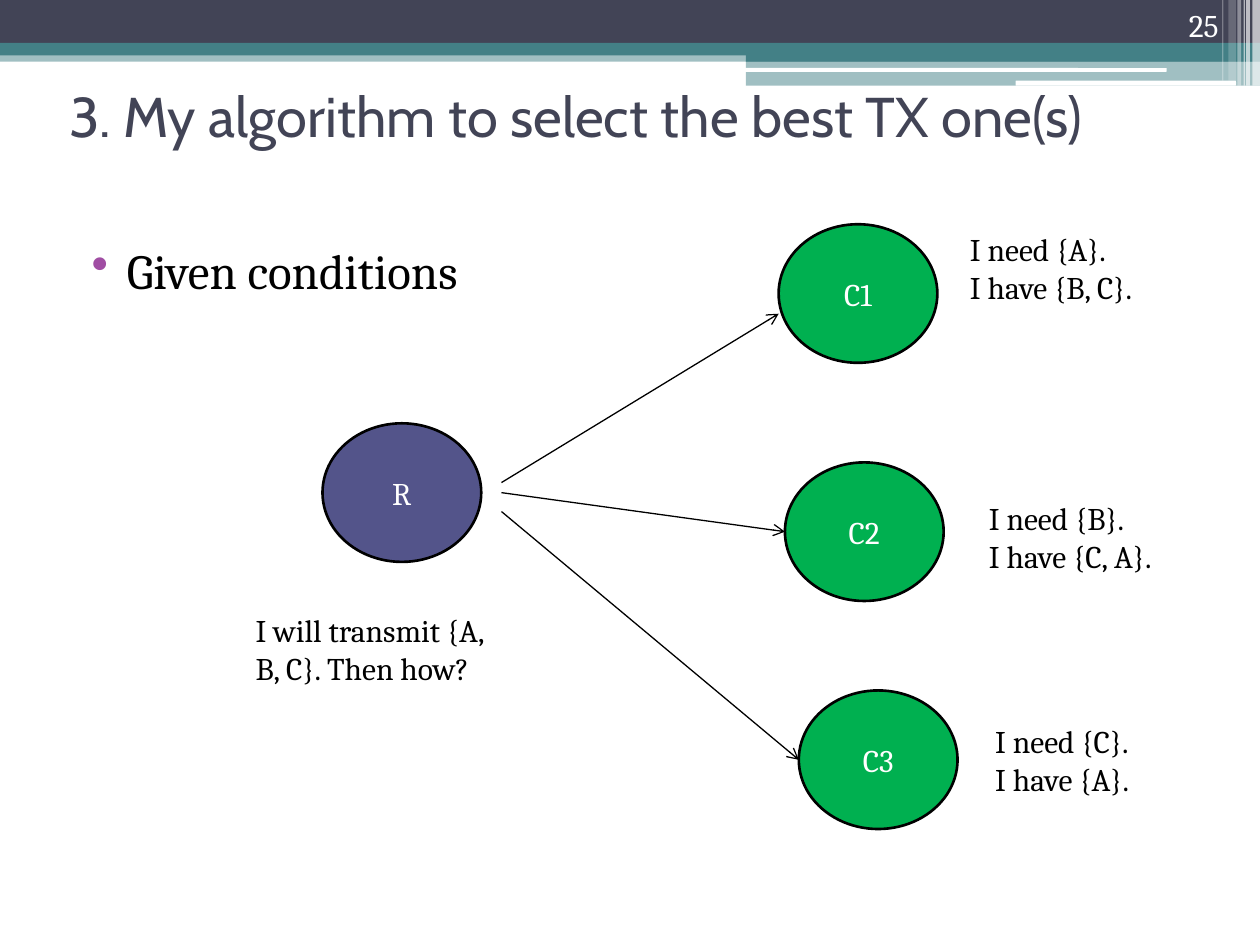
"""Build a slide on how a router picks the best packets to send to three clients."""
import pptx
import pptx.util
import pptx.dml.color
import pptx.enum.shapes
import pptx.enum.text
import pptx.oxml.ns
import lxml.etree

COLS, ROWS = 100, 75
UNIT = pptx.util.Inches(0.1)
KIND = pptx.enum.shapes.MSO_SHAPE
ALIGN = pptx.enum.text.PP_ALIGN
ANCHOR = pptx.enum.text.MSO_ANCHOR
DARK, TEAL, WHITE, BLACK = "424456", "438086", "FFFFFF", "000000"
BLUE, GREEN, PURPLE = "53548A", "00B050", "A04DA3"

BANDS = [
    (0, 4, 100, 0.9, TEAL, 50),
    (0, 0, 100, 3.4, DARK, 100),
    (0, 3.4, 100, 1, TEAL, 100),
    (59.2, 3.9, 40.8, 1, TEAL, 100),
    (59.2, 4.8, 40.8, 2, TEAL, 50),
]
PILLS = [(59.1, 5.4, 33.5, 0.3), (80.6, 6.4, 17.5, 0.4)]
STRIPES = [
    (99.4, 0.6, 6.8, 65),
    (98.9, 0.3, 6.8, 65),
    (98.7, 0.1, 6.8, 60),
    (98.2, 0.3, 6.8, 40),
    (97.5, 0.6, 6.4, 20),
    (97, 0.1, 6.4, 30),
]
NODE = (12.6, 11)
NOTE = (22, 7.1)
ROUTER = ("R", 25.6, 33.6)
CLIENTS = [
    ("C1", 61.8, 17.8, 38.3, 24.9, 76, 17.8, "I need {A}.\nI have {B, C}."),
    ("C2", 62.3, 36.7, 39.1, 42.2, 77.5, 39.1, "I need {B}.\nI have {C, A}."),
    ("C3", 63.4, 54.8, 40.6, 60.3, 78, 56.8, "I need {C}.\nI have {A}."),
]
START = 39.8

deck = pptx.Presentation()
deck.slide_width, deck.slide_height = COLS * UNIT, ROWS * UNIT
slide = deck.slides.add_slide(deck.slide_layouts[6])


def grid(*cells):
    return [round(cell * UNIT) for cell in cells]


def tint(code):
    return pptx.dml.color.RGBColor.from_string(code)


def add(parent, tag, **attrs):
    node = lxml.etree.SubElement(parent, pptx.oxml.ns.qn(tag))
    for key, value in attrs.items():
        node.set(key, str(value))
    return node


def draw(kind, box, fill, alpha=100, edge=None):
    shape = slide.shapes.add_shape(kind, *grid(*box))
    shape.shadow.inherit = False
    shape.fill.solid()
    shape.fill.fore_color.rgb = tint(fill)
    if alpha < 100:
        color = shape.fill._xPr.find(".//" + pptx.oxml.ns.qn("a:srgbClr"))
        add(color, "a:alpha", val=alpha * 1000)
    if edge:
        shape.line.color.rgb = tint(edge)
        shape.line.width = pptx.util.Pt(1.5)
    else:
        shape.line.fill.background()
    return shape


def write(text, box=None, shape=None, size=18, font="Cambria", color=BLACK,
          align=ALIGN.LEFT, anchor=ANCHOR.TOP, left=0, hang=0, dot=None):
    shape = shape or slide.shapes.add_textbox(*grid(*box))
    frame = shape.text_frame
    frame.word_wrap = True
    frame.vertical_anchor = anchor
    for i, line in enumerate(text.split("\n")):
        para = frame.add_paragraph() if i else frame.paragraphs[0]
        para.alignment = align
        props = para._p.get_or_add_pPr()
        if left:
            props.set("marL", str(grid(left)[0]))
            props.set("indent", str(grid(-hang)[0]))
        if dot:
            add(add(props, "a:buClr"), "a:srgbClr", val=dot)
            add(props, "a:buChar", char="•")
        run = para.add_run()
        run.text = line
        run.font.size = pptx.util.Pt(size)
        run.font.name = font
        run.font.color.rgb = tint(color)


def node(name, x, y, fill):
    shape = draw(KIND.OVAL, (x, y, *NODE), fill, edge=BLACK)
    write(name, shape=shape, color=WHITE, align=ALIGN.CENTER, anchor=ANCHOR.MIDDLE)


def arrow(*ends):
    straight = pptx.enum.shapes.MSO_CONNECTOR.STRAIGHT
    link = slide.shapes.add_connector(straight, *grid(*ends))
    link.line.color.rgb = tint(BLACK)
    link.line.width = pptx.util.Pt(0.75)
    add(link.line._get_or_add_ln(), "a:tailEnd", type="arrow")
    add(link._element.spPr, "a:effectLst")


for *box, fill, alpha in BANDS:
    draw(KIND.RECTANGLE, box, fill, alpha)
for box in PILLS:
    draw(KIND.ROUNDED_RECTANGLE, box, WHITE)
for x, wide, high, alpha in STRIPES:
    draw(KIND.RECTANGLE, (x, 0, wide, high), WHITE, alpha)

write("3. My algorithm to select the best TX one(s)", (3.3, 2.9, 92, 12.5),
      size=32, font="Cabin", color=DARK, anchor=ANCHOR.MIDDLE, left=6.8, hang=5.6)
write("25", (89.4, 0, 8.3, 4), color=WHITE, align=ALIGN.RIGHT, anchor=ANCHOR.BOTTOM)
write("Given conditions", (5.1, 18.6, 90, 47.3), size=28, left=4, hang=2.8, dot=PURPLE)

node(*ROUTER, BLUE)
for name, x, y, *rest in CLIENTS:
    node(name, x, y, GREEN)
for name, x, y, begin, end, *rest in CLIENTS:
    arrow(START, begin, x, end)
for *rest, x, y, text in CLIENTS:
    write(text, (x, y, *NOTE))
write("I will transmit {A, B, C}. Then how?", (19.3, 48, *NOTE))

deck.save("out.pptx")
